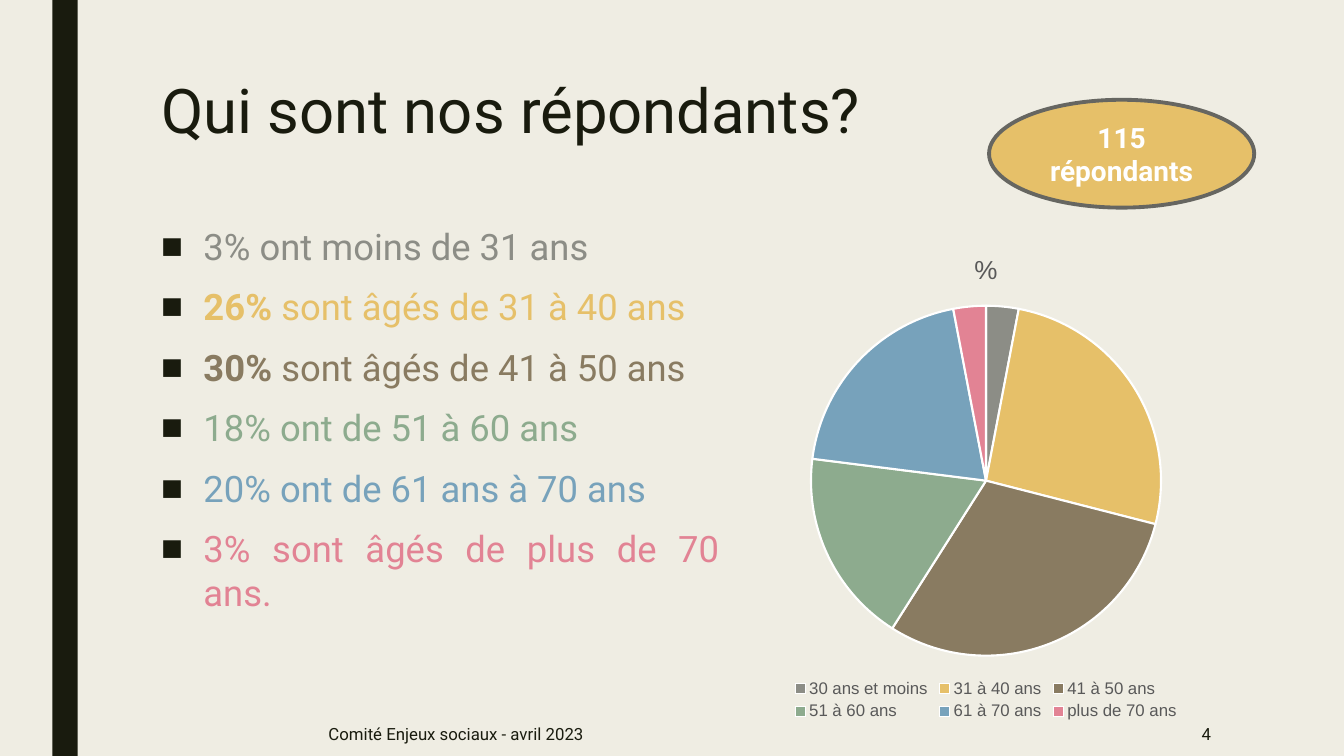
import pptx
import pptx.chart.data
import pptx.dml.color
import pptx.enum.chart
import pptx.enum.shapes
import pptx.enum.text
import pptx.oxml
import pptx.oxml.ns
import pptx.util
from pptx.util import Inches, Pt

COLOURS = {
    "paper": "EFEDE3", "ink": "191B0E", "white": "FFFFFF", "outline": "666661", "label": "595959",
    "grey": "8C8D86", "gold": "E6C069", "brown": "897B61",
    "green": "8DAB8E", "blue": "77A2BB", "pink": "E28394",
}
TITLE = "Qui sont nos répondants?"
BADGE = "115 répondants"
FOOTER = "Comité Enjeux sociaux - avril 2023"
PAGE_NUMBER = "4"
CHART_TITLE = "%"
AGE_GROUPS = [
    ("30 ans et moins", 3, "grey", "", "3% ont moins de 31 ans"),
    ("31 à 40 ans", 26, "gold", "26% ", "sont âgés de 31 à 40 ans"),
    ("41 à 50 ans", 30, "brown", "30% ", "sont âgés de 41 à 50 ans"),
    ("51 à 60 ans", 18, "green", "", "18% ont de 51 à 60 ans"),
    ("61 à 70 ans", 20, "blue", "", "20% ont de 61 ans à 70 ans"),
    ("plus de 70 ans", 3, "pink", "", "3% sont âgés de plus de 70 ans."),
]
AREAS = {
    "stripe": (0.52, 0, 0.25, 7.5),
    "title": (1.5, 0.75, 10.5, 1.62),
    "list": (1.5, 2.17, 5.74, 4.89),
    "badge": (9.81, 0.99, 2.63, 1.07),
    "footer": (3.16, 7.06, 6.87, 0.44),
    "number": (10.36, 7.06, 1.75, 0.44),
    "chart": (6.16, 2.3, 7.24, 4.89),
}
PIE_LAYOUT = {"x": 0.26, "y": 0.15, "w": 0.48, "h": 0.71}
LEGEND_LAYOUT = {"x": 0.23, "y": 0.9, "w": 0.54, "h": 0.1}
ALIGN = pptx.enum.text.PP_ALIGN
ANCHOR = pptx.enum.text.MSO_ANCHOR
SHAPE = pptx.enum.shapes.MSO_SHAPE


def colour(name):
    """Return the named colour."""
    return pptx.dml.color.RGBColor.from_string(COLOURS[name])


def area(name):
    """Return the left, top, width and height of a part."""
    return [Inches(length) for length in AREAS[name]]


def apply(target, formats):
    """Set each attribute from a dict."""
    for name, value in formats.items():
        setattr(target, name, value)


def style_font(font, size, tone, family="Roboto", bold=False):
    """Format a font."""
    apply(font, {"size": Pt(size), "name": family, "bold": bold})
    font.color.rgb = colour(tone)


def add_span(para, text, size, tone, bold=False):
    """Append formatted text to a paragraph."""
    span = para.add_run()
    span.text = text
    style_font(span.font, size, tone, bold=bold)


def add_box(page, name, anchor=ANCHOR.TOP):
    """Add a wrapping text box and return its frame."""
    frame = page.shapes.add_textbox(*area(name)).text_frame
    apply(frame, {"word_wrap": True, "vertical_anchor": anchor})
    return frame


def add_plain_shape(page, name, kind, tone):
    """Add a filled shape without shadow."""
    shape = page.shapes.add_shape(kind, *area(name))
    shape.shadow.inherit = False
    shape.fill.solid()
    shape.fill.fore_color.rgb = colour(tone)
    return shape


def add_bullet(para):
    """Give a paragraph a hanging square bullet."""
    settings = para._p.get_or_add_pPr()
    indent = Inches(0.42)
    settings.set("marL", str(indent))
    settings.set("indent", str(-indent))
    bullet_colour = pptx.oxml.ns.qn("a:buClr")
    holder = settings.makeelement(bullet_colour, {})
    holder.append(holder.makeelement(pptx.oxml.ns.qn("a:srgbClr"), {"val": COLOURS["ink"]}))
    settings.append(holder)
    for tag, values in (("a:buFont", {"typeface": "Arial"}), ("a:buChar", {"char": "■"})):
        settings.append(settings.makeelement(pptx.oxml.ns.qn(tag), values))


def place(element, position, fractions, inner=False):
    """Fix the layout of a chart part."""
    for old in element.findall(pptx.oxml.ns.qn("c:layout")):
        element.remove(old)
    target = '<c:layoutTarget val="inner"/>' if inner else ""
    modes = "".join(f'<c:{key}Mode val="edge"/>' for key in "xy")
    sizes = "".join(f'<c:{key} val="{value}"/>' for key, value in fractions.items())
    element.insert(position, pptx.oxml.parse_xml(
        f'<c:layout {pptx.oxml.ns.nsdecls("c")}><c:manualLayout>'
        f"{target}{modes}{sizes}</c:manualLayout></c:layout>"))


def add_list(page):
    """Add the coloured list of age groups."""
    frame = add_box(page, "list")
    for index, (_, _, tone, strong, text) in enumerate(AGE_GROUPS):
        para = frame.add_paragraph() if index else frame.paragraphs[0]
        apply(para, {"alignment": ALIGN.JUSTIFY, "space_before": Pt(6), "space_after": Pt(6)})
        add_bullet(para)
        if strong:
            add_span(para, strong, 26, tone, True)
        add_span(para, text, 26, tone)


def add_pie(page):
    """Add the pie of age groups."""
    data = pptx.chart.data.CategoryChartData()
    data.categories = [group[0] for group in AGE_GROUPS]
    data.add_series(CHART_TITLE, [group[1] for group in AGE_GROUPS])
    chart = page.shapes.add_chart(pptx.enum.chart.XL_CHART_TYPE.PIE, *area("chart"), data).chart
    style_font(chart.font, 10, "ink", "Arial")
    apply(chart, {"has_title": True, "has_legend": True})
    heading = chart.chart_title.text_frame
    heading.text = CHART_TITLE
    style_font(heading.paragraphs[0].runs[0].font, 18.6, "label", "Arial")
    apply(chart.legend, {"position": pptx.enum.chart.XL_LEGEND_POSITION.BOTTOM,
                         "include_in_layout": False})
    style_font(chart.legend.font, 12, "label", "Arial")
    plot = chart.plots[0]
    plot.vary_by_categories = True
    for index, group in enumerate(AGE_GROUPS):
        wedge = plot.series[0].points[index].format
        wedge.fill.solid()
        wedge.fill.fore_color.rgb = colour(group[2])
        wedge.line.color.rgb = colour("white")
        wedge.line.width = Pt(1.5)
    place(chart._chartSpace.xpath("c:chart/c:plotArea")[0], 0, PIE_LAYOUT, inner=True)
    place(chart._chartSpace.xpath("c:chart/c:legend")[0], 1, LEGEND_LAYOUT)


def main():
    """Build the slide on the respondents."""
    deck = pptx.Presentation()
    apply(deck, {"slide_width": Inches(13.33), "slide_height": Inches(7.5)})
    page = deck.slides.add_slide(deck.slide_layouts[6])
    page.background.fill.solid()
    page.background.fill.fore_color.rgb = colour("paper")

    add_plain_shape(page, "stripe", SHAPE.RECTANGLE, "ink").line.fill.background()
    title = add_box(page, "title").paragraphs[0]
    title.line_spacing = 0.89
    add_span(title, TITLE, 44, "ink")
    add_list(page)

    badge = add_plain_shape(page, "badge", SHAPE.OVAL, "gold")
    badge.line.color.rgb = colour("outline")
    badge.line.width = Pt(2.75)
    apply(badge.text_frame, {"word_wrap": True, "vertical_anchor": ANCHOR.MIDDLE})
    label = badge.text_frame.paragraphs[0]
    label.alignment = ALIGN.CENTER
    add_span(label, BADGE, 20, "white", True)

    for name, text, side in (("footer", FOOTER, ALIGN.LEFT), ("number", PAGE_NUMBER, ALIGN.RIGHT)):
        para = add_box(page, name, ANCHOR.MIDDLE).paragraphs[0]
        para.alignment = side
        add_span(para, text, 12, "ink")
    add_pie(page)
    deck.save("out.pptx")


if __name__ == "__main__":
    main()
